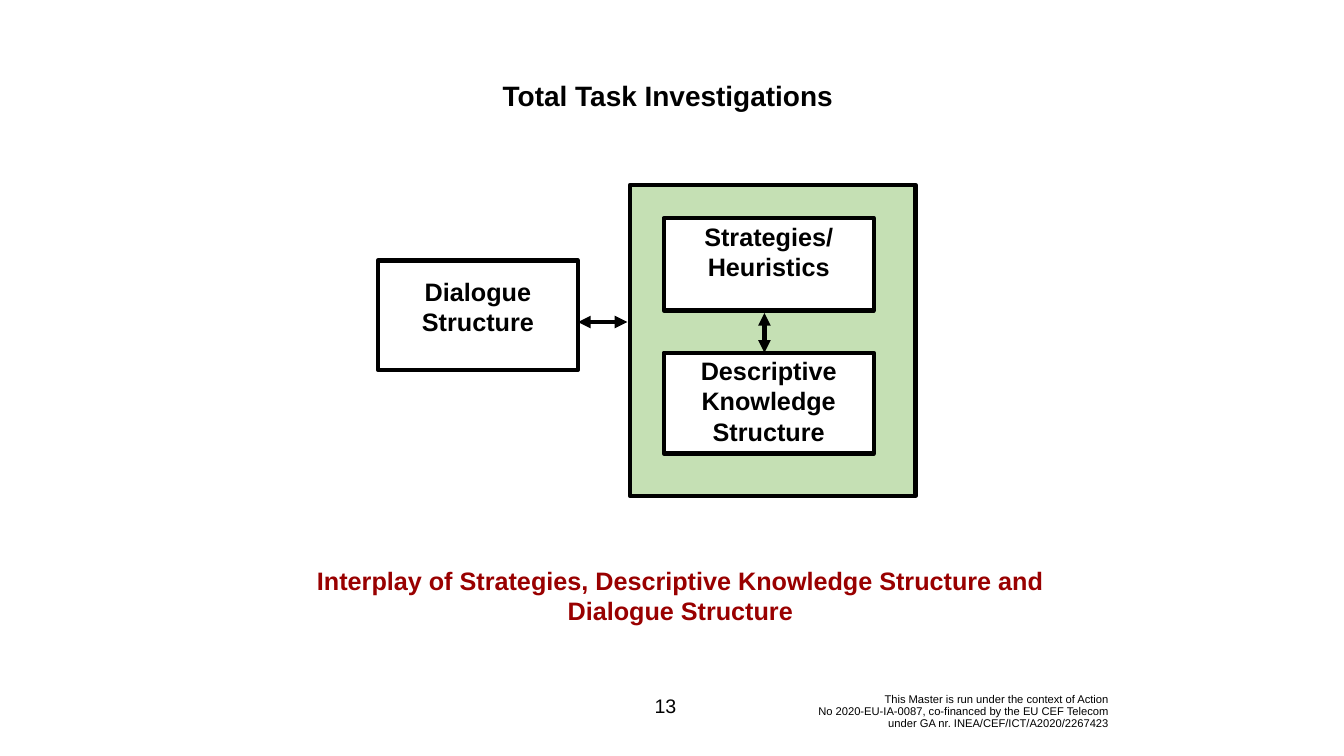
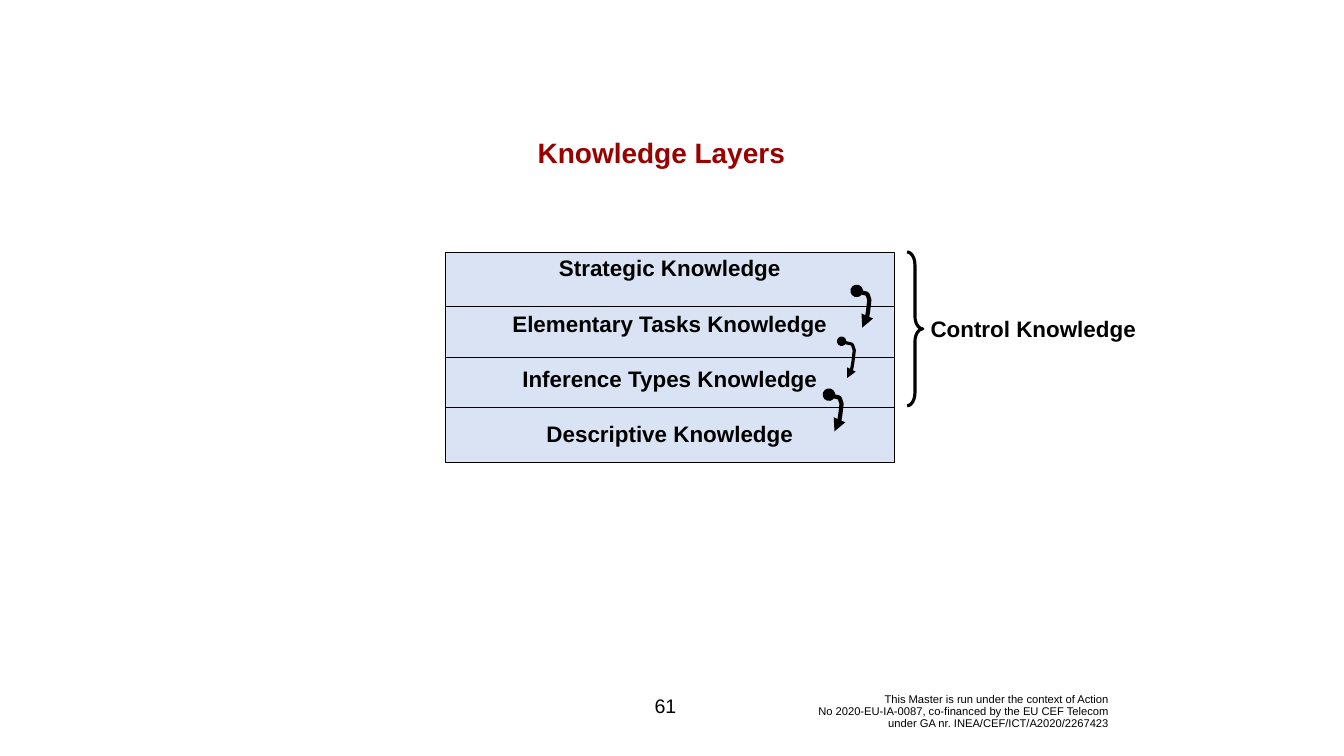
"""Build two slides on task investigations and the layers of knowledge."""
from dataclasses import dataclass

from lxml import etree
from pptx import Presentation
from pptx.dml.color import RGBColor
from pptx.enum.shapes import MSO_CONNECTOR, MSO_SHAPE
from pptx.enum.text import MSO_ANCHOR, MSO_AUTO_SIZE, PP_ALIGN
from pptx.oxml.ns import qn
from pptx.shapes.base import BaseShape
from pptx.slide import Slide
from pptx.text.text import TextFrame
from pptx.util import Cm, Pt

RECTANGLE = MSO_SHAPE.RECTANGLE
RIGHT_BRACE = MSO_SHAPE.RIGHT_BRACE
STRAIGHT = MSO_CONNECTOR.STRAIGHT
TOP, MIDDLE = MSO_ANCHOR.TOP, MSO_ANCHOR.MIDDLE
CENTER, RIGHT = PP_ALIGN.CENTER, PP_ALIGN.RIGHT
NO_FIT = MSO_AUTO_SIZE.NONE
TITLE_ONLY = 5


@dataclass(frozen=True)
class Theme:
    font: str = "Arial"
    black: str = "000000"
    white: str = "FFFFFF"
    red: str = "990000"
    green: str = "C5E0B4"
    blue: str = "DAE3F3"
    title_size: float = 40
    body_size: float = 36
    layer_size: float = 32
    number_size: float = 28
    footer_size: float = 16
    heavy: float = 6
    medium: float = 4.5
    thin: float = 0.75


THEME = Theme()


@dataclass(frozen=True)
class Area:
    left: float
    top: float
    width: float
    height: float

    def lengths(self) -> tuple[Cm, Cm, Cm, Cm]:
        return Cm(self.left), Cm(self.top), Cm(self.width), Cm(self.height)


@dataclass(frozen=True)
class Part:
    area: Area
    lines: tuple[str, ...]
    inset_top: float = 0.13


@dataclass(frozen=True)
class Link:
    start: tuple[float, float]
    end: tuple[float, float]
    weight: float
    arrows: bool = False


@dataclass(frozen=True)
class Hook:
    left: float
    top: float
    weight: float


FOOTER_AREA = Area(38.15, 34.9, 17.98, 1.93)
NUMBER_AREA = Area(32.13, 34.52, 2.82, 2.1)
FOOTER = (
    "This Master is run under the context of Action\v"
    "No 2020-EU-IA-0087, co-financed by the EU CEF Telecom\v"
    "under GA nr. INEA/CEF/ICT/A2020/2267423"
)

TASK_GROUP = Area(31.75, 9.32, 14.4, 15.67)
TASK_PARTS = (
    Part(Area(33.45, 11, 10.59, 4.65), ("Strategies/", "Heuristics")),
    Part(Area(33.45, 17.78, 10.59, 5.08), ("Descriptive Knowledge", "Structure")),
    Part(Area(19.05, 13.13, 10.08, 5.51), ("Dialogue", "Structure"), inset_top=0.78),
)
TASK_LINKS = (
    Link((38.53, 15.77), (38.53, 17.78), THEME.heavy, arrows=True),
    Link((29.13, 16.23), (31.62, 16.23), THEME.heavy, arrows=True),
)

LAYER_STACK = Area(22.43, 12.7, 22.66, 10.59)
LAYERS = (
    "Strategic Knowledge",
    "Elementary Tasks Knowledge",
    "Inference Types Knowledge",
    "Descriptive Knowledge",
)
LAYER_GAP = 40.3
FIRST_DIVIDER, DIVIDER_STEP = 15.45, 2.54
HOOKS = (
    Hook(43.18, 14.66, THEME.heavy),
    Hook(42.42, 17.2, THEME.medium),
    Hook(41.78, 19.89, THEME.heavy),
)
HOOK_CURVES = (
    ((0, 0), (0.64, 0.23), (0.48, 0), (0.64, 0.46)),
    ((0.64, 0.46), (0.58, 0.81), (0.58, 1.55), (0.28, 1.85)),
)
CURVE_STEPS = 10


def write(frame: TextFrame, *lines: str, size: float, color: str = THEME.black,
          bold: bool = True, align: PP_ALIGN = CENTER, anchor: MSO_ANCHOR = TOP,
          gap: float = 0, spacing: float = 1.0, inset_top: float = 0.13) -> None:
    frame.word_wrap = True
    frame.auto_size = NO_FIT
    frame.vertical_anchor = anchor
    frame.margin_top = Cm(inset_top)
    frame.text = "\n".join(lines)
    for index, paragraph in enumerate(frame.paragraphs):
        paragraph.alignment = align
        paragraph.line_spacing = spacing
        paragraph.space_before = Pt(gap if index else 0)
        for run in paragraph.runs:
            run.font.name = THEME.font
            run.font.size = Pt(size)
            run.font.bold = bold
            run.font.color.rgb = RGBColor.from_string(color)


def add_label(slide: Slide, area: Area) -> TextFrame:
    return slide.shapes.add_textbox(*area.lengths()).text_frame


def outline(shape: BaseShape, weight: float) -> None:
    shape.line.color.rgb = RGBColor.from_string(THEME.black)
    shape.line.width = Pt(weight)


def add_ends(shape: BaseShape, head: str, tail: str) -> None:
    line = shape.element.spPr.find(qn("a:ln"))
    for tag, kind in (("a:headEnd", head), ("a:tailEnd", tail)):
        etree.SubElement(line, qn(tag), type=kind)


def add_block(slide: Slide, area: Area, fill: str, weight: float) -> TextFrame:
    block = slide.shapes.add_shape(RECTANGLE, *area.lengths())
    block.shadow.inherit = False
    block.fill.solid()
    block.fill.fore_color.rgb = RGBColor.from_string(fill)
    outline(block, weight)
    return block.text_frame


def add_link(slide: Slide, link: Link) -> None:
    ends = [Cm(value) for value in link.start + link.end]
    connector = slide.shapes.add_connector(STRAIGHT, *ends)
    outline(connector, link.weight)
    if link.arrows:
        add_ends(connector, "triangle", "triangle")
    etree.SubElement(connector.element.spPr, qn("a:effectLst"))


def curve_point(curve: tuple[tuple[float, float], ...], t: float) -> tuple[float, float]:
    weights = ((1 - t) ** 3, 3 * t * (1 - t) ** 2, 3 * t ** 2 * (1 - t), t ** 3)
    return (sum(w * x for w, (x, _) in zip(weights, curve)),
            sum(w * y for w, (_, y) in zip(weights, curve)))


def add_hook(slide: Slide, hook: Hook) -> None:
    offsets = [curve_point(curve, step / CURVE_STEPS)
               for curve in HOOK_CURVES for step in range(1, CURVE_STEPS + 1)]
    points = [(Cm(hook.left + x), Cm(hook.top + y)) for x, y in offsets]
    builder = slide.shapes.build_freeform(Cm(hook.left), Cm(hook.top))
    builder.add_line_segments(points, close=False)
    arrow = builder.convert_to_shape()
    arrow.shadow.inherit = False
    arrow.fill.background()
    outline(arrow, hook.weight)
    add_ends(arrow, "oval", "triangle")


def add_brace(slide: Slide, area: Area) -> None:
    brace = slide.shapes.add_shape(RIGHT_BRACE, *area.lengths())
    brace.shadow.inherit = False
    brace.adjustments[0] = 0.82
    brace.fill.background()
    outline(brace, THEME.medium)


def add_slide(deck: Presentation, title: str, area: Area, color: str, number: int) -> Slide:
    slide = deck.slides.add_slide(deck.slide_layouts[TITLE_ONLY])
    heading = slide.shapes.title
    heading.left, heading.top, heading.width, heading.height = area.lengths()
    write(heading.text_frame, title, size=THEME.title_size, color=color)
    write(add_label(slide, FOOTER_AREA), FOOTER, size=THEME.footer_size, bold=False,
          align=RIGHT, anchor=MIDDLE, spacing=0.9)
    write(add_label(slide, NUMBER_AREA), str(number), size=THEME.number_size,
          bold=False, anchor=MIDDLE)
    return slide


def build_task_slide(deck: Presentation) -> None:
    slide = add_slide(deck, "Total Task Investigations",
                      Area(12.7, 3.81, 41.91, 1.96), THEME.black, 13)
    add_block(slide, TASK_GROUP, THEME.green, THEME.heavy)
    for part in TASK_PARTS:
        frame = add_block(slide, part.area, THEME.white, THEME.heavy)
        write(frame, *part.lines, size=THEME.body_size, inset_top=part.inset_top)
    for link in TASK_LINKS:
        add_link(slide, link)
    write(add_label(slide, Area(13.97, 28.37, 40.64, 3.33)),
          "Interplay of Strategies, Descriptive Knowledge Structure and Dialogue Structure",
          size=THEME.body_size, color=THEME.red)


def build_layer_slide(deck: Presentation) -> None:
    slide = add_slide(deck, "Knowledge Layers",
                      Area(16.4, 6.68, 33.86, 1.96), THEME.red, 61)
    stack = add_block(slide, LAYER_STACK, THEME.blue, THEME.thin)
    write(stack, *LAYERS, size=THEME.layer_size, gap=LAYER_GAP)
    right = LAYER_STACK.left + LAYER_STACK.width
    for index in range(len(LAYERS) - 1):
        y = FIRST_DIVIDER + index * DIVIDER_STEP
        add_link(slide, Link((LAYER_STACK.left, y), (right, y), THEME.thin))
    for hook in HOOKS:
        add_hook(slide, hook)
    add_brace(slide, Area(45.72, 12.7, 0.79, 7.75))
    write(add_label(slide, Area(45.72, 15.77, 11.79, 1.63)), "Control Knowledge",
          size=THEME.layer_size, align=RIGHT)


def main() -> None:
    deck = Presentation()
    deck.slide_width, deck.slide_height = Cm(67.74), Cm(38.1)
    build_task_slide(deck)
    build_layer_slide(deck)
    deck.save("out.pptx")


if __name__ == "__main__":
    main()
